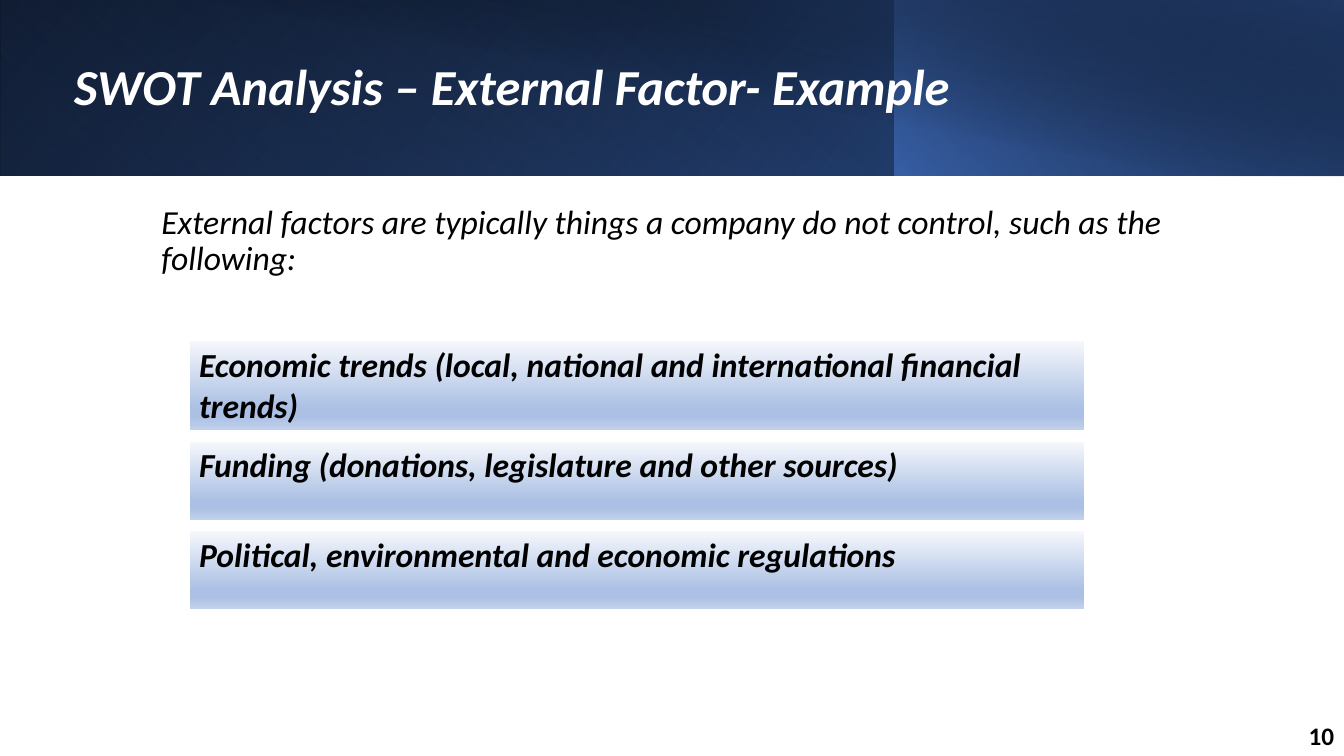
from dataclasses import dataclass

from lxml.etree import SubElement
from pptx import Presentation
from pptx.dml.color import RGBColor
from pptx.dml.fill import FillFormat
from pptx.enum.shapes import MSO_SHAPE as Preset
from pptx.enum.text import MSO_ANCHOR as Anchor, MSO_AUTO_SIZE as AutoSize, PP_ALIGN as Align
from pptx.oxml import parse_xml
from pptx.oxml.ns import nsdecls, qn
from pptx.shapes.base import BaseShape
from pptx.slide import Slide
from pptx.util import Emu, Pt

EMU_PER_PX = 9525
FONT = "Calibri"
WHITE, BLACK = "FFFFFF", "000000"


@dataclass(frozen=True)
class Stop:
    """A gradient stop with position and opacity in percent."""
    position: int
    color: str
    opacity: int = 100


@dataclass(frozen=True)
class Band:
    """A gradient layer of the header."""
    left: int
    width: int
    height: int
    angle: int
    stops: tuple[Stop, ...]
    flipped: bool = True
    rotation: int = 0


@dataclass(frozen=True)
class Factor:
    """An external factor in its own one-cell table."""
    top: int
    height: int
    wording: str


HEADER = (
    Band(0, 1280, 167, 140, (Stop(0, BLACK), Stop(100, "2F5597"))),
    Band(0, 852, 167, 230, (Stop(20, "4472C4", 0), Stop(100, "203864", 55)), rotation=180),
    Band(852, 428, 167, 220, (Stop(0, "4472C4", 66), Stop(100, BLACK, 30))),
    Band(48, 1232, 168, 280, (Stop(50, BLACK, 0), Stop(99, "203864", 52)), flipped=False),
)
FACTORS = (
    Factor(324, 86, "Economic trends (local, national and international financial trends)"),
    Factor(420, 77, "Funding (donations, legislature and other sources)"),
    Factor(505, 77, "Political, environmental and economic regulations"),
)
FACTOR_STOPS = (Stop(0, "F6F8FC"), Stop(74, "ABC0E4"), Stop(83, "ABC0E4"), Stop(100, "C7D5ED"))
BORDER_POINTS = {"lnL": 1, "lnR": 1, "lnT": 1, "lnB": 3}


def px(length: int) -> Emu:
    """Turn pixels into EMU."""
    return Emu(length * EMU_PER_PX)


def rgb(color: str) -> RGBColor:
    """Turn a hex string into a colour."""
    return RGBColor.from_string(color)


def apply_gradient(fill: FillFormat, owner: BaseShape, angle: int, stops: tuple[Stop, ...]) -> None:
    """Give the fill a linear gradient whose angle runs clockwise."""
    fill.gradient()
    fill.gradient_angle = 360 - angle
    stop_list = next(owner.element.iter(qn("a:gsLst")))
    stop_list.clear()
    for stop in stops:
        entry = SubElement(stop_list, qn("a:gs"), pos=str(stop.position * 1000))
        color = SubElement(entry, qn("a:srgbClr"), val=stop.color)
        if stop.opacity < 100:
            SubElement(color, qn("a:alpha"), val=str(stop.opacity * 1000))


def write(frame, wording: str, size: int, color: str = BLACK, bold: bool = True,
          italic: bool = True, align: Align = Align.LEFT):
    """Write one formatted paragraph and return it."""
    frame.text = wording
    paragraph = frame.paragraphs[0]
    paragraph.alignment = align
    font = paragraph.font
    font.name, font.size, font.bold, font.italic = FONT, Pt(size), bold, italic
    font.color.rgb = rgb(color)
    return paragraph


def place(box: BaseShape, left: int, top: int, width: int, height: int) -> None:
    """Move a text shape and centre its text vertically."""
    box.left, box.top, box.width, box.height = map(px, (left, top, width, height))
    box.text_frame.word_wrap = True
    box.text_frame.auto_size = AutoSize.NONE
    box.text_frame.vertical_anchor = Anchor.MIDDLE


def draw_band(slide: Slide, band: Band) -> None:
    """Draw one header layer."""
    layer = slide.shapes.add_shape(Preset.RECTANGLE, px(band.left), 0, px(band.width), px(band.height))
    layer.shadow.inherit = False
    layer.line.fill.background()
    layer.rotation = band.rotation
    if band.flipped:
        layer.element.spPr.get_or_add_xfrm().set("flipH", "1")
    apply_gradient(layer.fill, layer, band.angle, band.stops)


def draw_factor(slide: Slide, factor: Factor) -> None:
    """Draw one factor as a white-bordered gradient cell."""
    holder = slide.shapes.add_table(1, 1, px(180), px(factor.top), px(853), px(factor.height))
    holder.table.first_row = False
    holder.table.horz_banding = False
    cell = holder.table.cell(0, 0)
    write(cell.text_frame, factor.wording, 24)
    apply_gradient(cell.fill, holder, 90, FACTOR_STOPS)
    properties = next(holder.element.iter(qn("a:tcPr")))
    for index, (side, points) in enumerate(BORDER_POINTS.items()):
        properties.insert(index, parse_xml(
            f'<a:{side} {nsdecls("a")} w="{Pt(points)}"><a:solidFill>'
            f'<a:srgbClr val="{WHITE}"/></a:solidFill></a:{side}>'))


def main() -> None:
    """Build and save the slide."""
    deck = Presentation()
    deck.slide_width, deck.slide_height = px(1280), px(720)
    slide = deck.slides.add_slide(deck.slide_layouts[1])
    for band in HEADER:
        draw_band(slide, band)

    title, intro = slide.shapes.title, slide.placeholders[1]
    for placeholder in (title, intro):
        placeholder.element.getparent().append(placeholder.element)

    place(title, 61, 31, 1121, 108)
    write(title.text_frame, "SWOT Analysis – External Factor- Example", 36, WHITE).line_spacing = 0.9

    place(intro, 144, 176, 1020, 157)
    intro.text_frame.margin_bottom = px(53)
    sentence = write(
        intro.text_frame,
        "External factors are typically things a company do not control, such as the following:",
        24, bold=False)
    sentence.line_spacing, sentence.space_before = 0.9, Pt(10)
    properties = sentence.runs[0].font and next(intro.element.iter(qn("a:pPr")))
    properties.set("marL", "0")
    properties.set("indent", "0")
    properties.insert_element_before(
        parse_xml(f'<a:buNone {nsdecls("a")}/>'), "a:tabLst", "a:defRPr", "a:extLst")

    page_number = slide.shapes.add_textbox(0, 0, 0, 0)
    place(page_number, 1222, 681, 58, 38)
    write(page_number.text_frame, "10", 18, italic=False, align=Align.RIGHT).space_after = Pt(6)

    for factor in FACTORS:
        draw_factor(slide, factor)
    deck.save("out.pptx")


if __name__ == "__main__":
    main()
